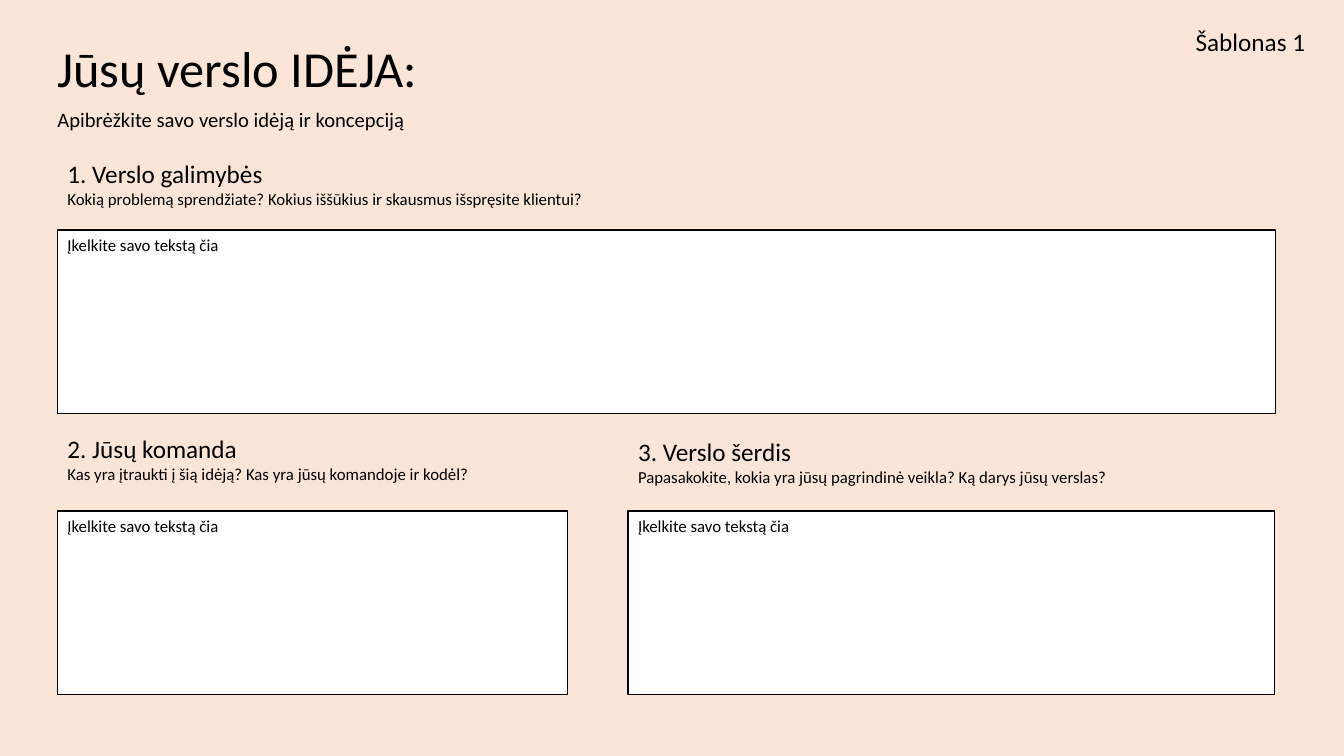
from pptx import Presentation
from pptx.dml.color import RGBColor
from pptx.enum.shapes import MSO_SHAPE
from pptx.enum.text import MSO_ANCHOR, MSO_AUTO_SIZE, PP_ALIGN
from pptx.util import Inches, Pt

COLORS = {"background": "FBE5D6", "field": "FFFFFF", "ink": "000000"}
FONT = "Calibri"
PROMPT = "Įkelkite savo tekstą čia"

# Grid in inches
LEFT, RIGHT_COLUMN = 0.57, 6.23
UPPER_ROW, LOWER_ROW = 2.28, 5.07
FIELD_HEIGHT, HEADING_HEIGHT = 1.82, 0.61
HEADER_WIDTH = 12.2

# Heading, question, heading width, gap from heading top to field, field box
SECTIONS = [
    ("1. Verslo galimybės",
     "Kokią problemą sprendžiate? Kokius iššūkius ir skausmus išspręsite klientui?",
     5.37, 0.76, (LEFT, UPPER_ROW, 12.08, FIELD_HEIGHT)),
    ("2. Jūsų komanda",
     "Kas yra įtraukti į šią idėją? Kas yra jūsų komandoje ir kodėl?",
     4.23, 0.82, (LEFT, LOWER_ROW, 5.06, FIELD_HEIGHT)),
    ("3. Verslo šerdis",
     "Papasakokite, kokia yra jūsų pagrindinė veikla? Ką darys jūsų verslas?",
     4.9, 0.79, (RIGHT_COLUMN, LOWER_ROW, 6.41, FIELD_HEIGHT)),
]


def color(name):
    return RGBColor.from_string(COLORS[name])


def write(frame, lines, wrap=True, anchor=MSO_ANCHOR.TOP):
    """Fill a text frame with (text, size) lines, aligned left."""
    frame.text = "\n".join(text for text, size in lines)
    frame.word_wrap = wrap
    frame.auto_size = MSO_AUTO_SIZE.NONE
    frame.vertical_anchor = anchor
    for para, (text, size) in zip(frame.paragraphs, lines):
        para.alignment = PP_ALIGN.LEFT
        for span in para.runs:
            span.font.name = FONT
            span.font.size = Pt(size)
            span.font.color.rgb = color("ink")


def add_text(page, box, lines, wrap=False):
    shape = page.shapes.add_textbox(*map(Inches, box))
    write(shape.text_frame, lines, wrap)
    return shape


def format_header_line(shape, text, size):
    frame = shape.text_frame
    write(frame, [(text, size)], anchor=MSO_ANCHOR.MIDDLE)
    frame.margin_left = frame.margin_right = 0
    frame.margin_top = frame.margin_bottom = 0
    frame.paragraphs[0].line_spacing = 0.9


def add_header(page, box):
    left, top, width, height = box
    # Title
    title = page.shapes.title
    title.left, title.top, title.width, title.height = map(Inches, box)
    format_header_line(title, "Jūsų verslo IDĖJA:", 36)
    # Subtitle
    subtitle = page.shapes.add_textbox(
        *map(Inches, (left, top + height + 0.06, width, 0.25)))
    format_header_line(subtitle, "Apibrėžkite savo verslo idėją ir koncepciją", 14.7)
    # Template label in the corner
    add_text(page, (left + width - 1.01, top - 0.2, 1.3, 0.4), [("Šablonas 1", 18)])


def add_section(page, heading, question, heading_width, heading_gap, box):
    left, top, width, height = box
    # Heading and question above the field
    add_text(page, (left, top - heading_gap, heading_width, HEADING_HEIGHT),
             [(heading, 18), (question, 12)])
    # Field to fill in
    field = page.shapes.add_shape(MSO_SHAPE.RECTANGLE, *map(Inches, box))
    field.shadow.inherit = False
    field.fill.solid()
    field.fill.fore_color.rgb = color("field")
    field.line.color.rgb = color("ink")
    field.line.width = Pt(1)
    write(field.text_frame, [(PROMPT, 12)])


def main():
    deck = Presentation()
    deck.slide_width, deck.slide_height = Inches(13.33), Inches(7.5)
    page = deck.slides.add_slide(deck.slide_layouts[5])
    page.background.fill.solid()
    page.background.fill.fore_color.rgb = color("background")
    add_header(page, (LEFT, 0.41, HEADER_WIDTH, 0.6))
    for section in SECTIONS:
        add_section(page, *section)
    deck.save("out.pptx")


if __name__ == "__main__":
    main()
